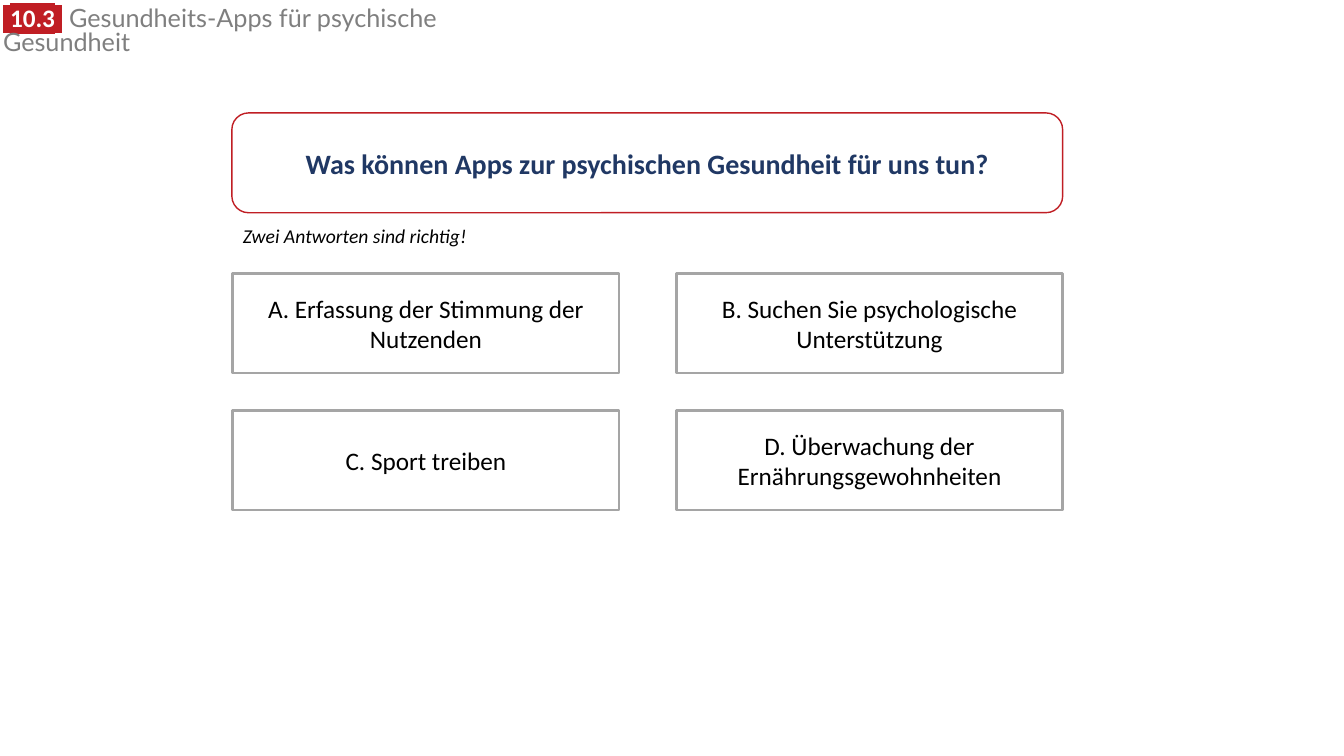
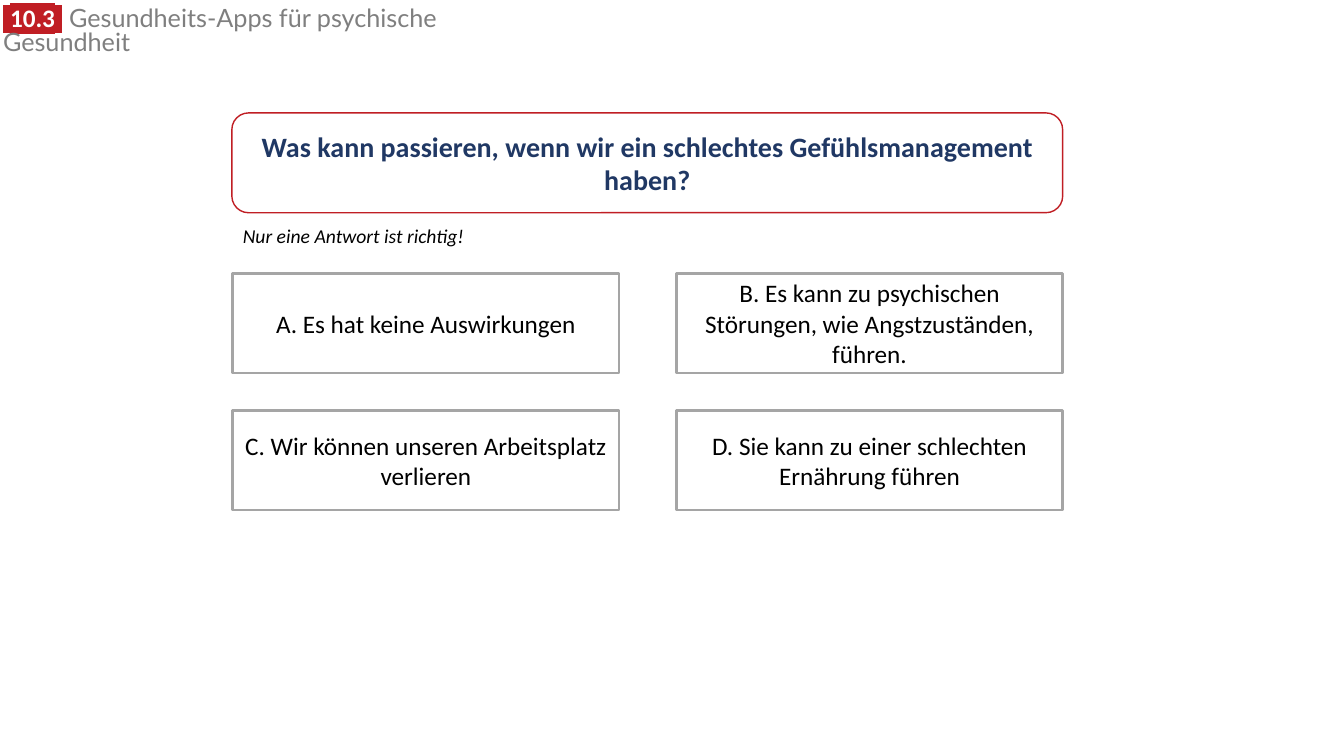
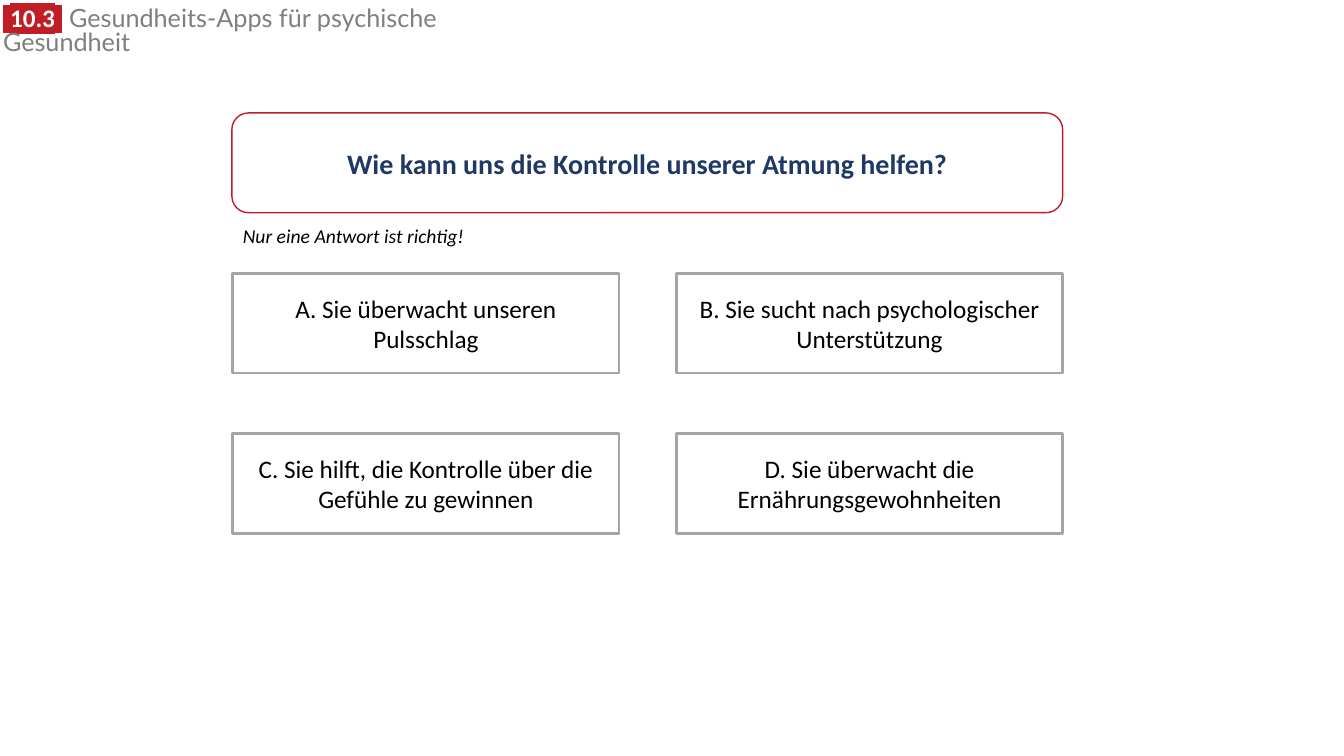
from dataclasses import dataclass

from lxml import etree
from pptx import Presentation
from pptx.dml.color import RGBColor
from pptx.enum.shapes import MSO_SHAPE
from pptx.enum.text import MSO_ANCHOR, MSO_AUTO_SIZE, PP_ALIGN
from pptx.oxml.ns import qn
from pptx.util import Inches, Pt

RECTANGLE = MSO_SHAPE.RECTANGLE
ROUNDED = MSO_SHAPE.ROUNDED_RECTANGLE
TOP, MIDDLE = MSO_ANCHOR.TOP, MSO_ANCHOR.MIDDLE
LEFT, CENTER = PP_ALIGN.LEFT, PP_ALIGN.CENTER
GROW = MSO_AUTO_SIZE.SHAPE_TO_FIT_TEXT
TITLE_ONLY = 5


@dataclass(frozen=True)
class Theme:
    white: str = "FFFFFF"
    black: str = "000000"
    red: str = "C01E24"
    navy: str = "203864"
    grey: str = "7F7F7F"
    frame_grey: str = "A5A5A5"
    font: str = "Calibri"
    badge_font: str = "Arial"
    title_font: str = "Lato"
    question_size: int = 20
    text_size: int = 18
    hint_size: int = 14


class QuizDeck:
    def __init__(self, theme):
        self.theme = theme
        self.deck = Presentation()
        self.deck.slide_width = Inches(13.33)
        self.deck.slide_height = Inches(7.5)
        self.page = None

    def add_page(self):
        layout = self.deck.slide_layouts[TITLE_ONLY]
        self.page = self.deck.slides.add_slide(layout)

    def span(self, para, text, size, color, font=None, bold=False,
             italic=False, highlight=None):
        """Append one formatted run, optionally on a highlight colour."""
        span = para.add_run()
        span.text = text
        span.font.size = Pt(size)
        span.font.bold = bold
        span.font.italic = italic
        span.font.color.rgb = RGBColor.from_string(color)
        span.font.name = font or self.theme.font
        if highlight:
            properties = span.font._element
            mark = etree.Element(qn("a:highlight"))
            etree.SubElement(mark, qn("a:srgbClr"), val=highlight)
            properties.find(qn("a:solidFill")).addnext(mark)

    def frame(self, box, anchor, align):
        """Set up the text frame of a box and return its first paragraph."""
        frame = box.text_frame
        frame.word_wrap = True
        frame.vertical_anchor = anchor
        frame.margin_left = frame.margin_right = Inches(0.1)
        frame.margin_top = frame.margin_bottom = Inches(0.05)
        para = frame.paragraphs[0]
        para.alignment = align
        return para

    def title(self, number, text):
        theme = self.theme
        box = self.page.shapes.title
        box.left, box.top = Inches(-0.07), Inches(0.03)
        box.width, box.height = Inches(5.43), Inches(0.34)
        para = self.frame(box, TOP, LEFT)
        box.text_frame.auto_size = GROW
        para.line_spacing = 0.8
        for part, font in ((" ", theme.badge_font), (number, theme.font),
                           (" ", theme.badge_font)):
            self.span(para, part, theme.text_size, theme.white, font,
                      bold=True, highlight=theme.red)
        self.span(para, " ", theme.text_size, theme.grey, theme.badge_font)
        self.span(para, text, theme.text_size, theme.grey, theme.title_font)

    def panel(self, kind, left, top, width, line_color, line_width):
        """Add a white outlined shape and return its centred paragraph."""
        box = self.page.shapes.add_shape(
            kind, Inches(left), Inches(top), Inches(width), Inches(0.99))
        box.shadow.inherit = False
        box.fill.solid()
        box.fill.fore_color.rgb = RGBColor.from_string(self.theme.white)
        box.line.color.rgb = RGBColor.from_string(line_color)
        box.line.width = Pt(line_width)
        return self.frame(box, MIDDLE, CENTER)

    def question(self, text):
        theme = self.theme
        para = self.panel(ROUNDED, 2.3, 1.12, 8.24, theme.red, 1)
        self.span(para, text, theme.question_size, theme.navy, bold=True)

    def hint(self, text):
        theme = self.theme
        box = self.page.shapes.add_textbox(
            Inches(2.31), Inches(2.17), Inches(2.69), Inches(0.34))
        para = self.frame(box, TOP, LEFT)
        box.text_frame.auto_size = GROW
        self.span(para, text, theme.hint_size, theme.black, italic=True)

    def answers(self, texts, row_pitch):
        """Lay the answers out in two columns, row by row."""
        theme = self.theme
        for index, text in enumerate(texts):
            row, column = divmod(index, 2)
            para = self.panel(RECTANGLE, 2.31 + 4.4 * column,
                              2.71 + row_pitch * row, 3.83,
                              theme.frame_grey, 2)
            self.span(para, text, theme.text_size, theme.black)


ONE_CORRECT = "Nur eine Antwort ist richtig!"
TWO_CORRECT = "Zwei Antworten sind richtig!"

# Question, hint, answers, distance between answer rows
QUIZ = (
    ("Was können Apps zur psychischen Gesundheit für uns tun?",
     TWO_CORRECT,
     ("A. Erfassung der Stimmung der Nutzenden",
      "B. Suchen Sie psychologische Unterstützung",
      "C. Sport treiben",
      "D. Überwachung der Ernährungsgewohnheiten"), 1.36),
    ("Was kann passieren, wenn wir ein schlechtes Gefühlsmanagement haben?",
     ONE_CORRECT,
     ("A. Es hat keine Auswirkungen",
      "B. Es kann zu psychischen Störungen, wie Angstzuständen, führen.",
      "C. Wir können unseren Arbeitsplatz verlieren",
      "D. Sie kann zu einer schlechten Ernährung führen"), 1.36),
    ("Wie kann uns die Kontrolle unserer Atmung helfen?",
     ONE_CORRECT,
     ("A. Sie überwacht unseren Pulsschlag",
      "B. Sie sucht nach psychologischer Unterstützung",
      "C. Sie hilft, die Kontrolle über die Gefühle zu gewinnen",
      "D. Sie überwacht die Ernährungsgewohnheiten"), 1.59),
)


def main():
    quiz = QuizDeck(Theme())
    for question, hint, answers, row_pitch in QUIZ:
        quiz.add_page()
        quiz.title("10.3", "Gesundheits-Apps für psychische Gesundheit")
        quiz.question(question)
        quiz.hint(hint)
        quiz.answers(answers, row_pitch)
    quiz.deck.save("out.pptx")


if __name__ == "__main__":
    main()
